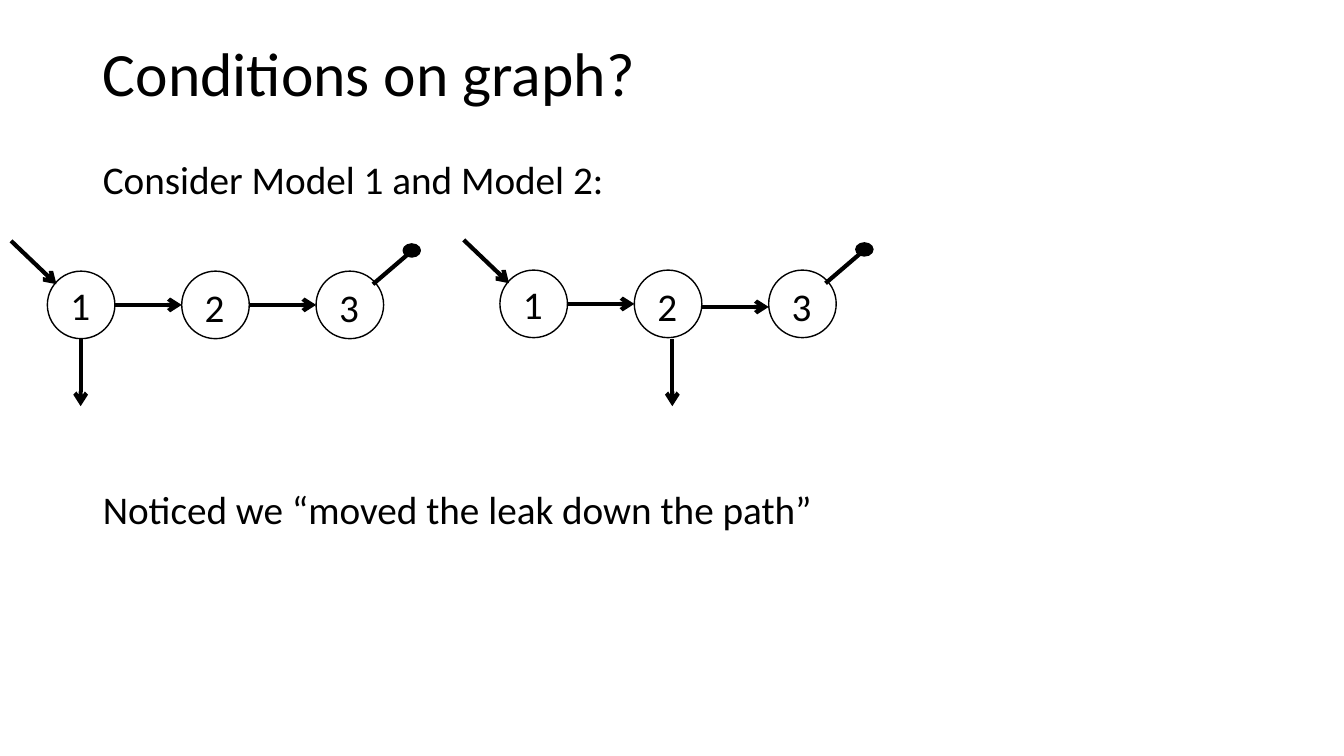
from lxml import etree
from pptx import Presentation, util as u
from pptx.dml.color import RGBColor
from pptx.enum import shapes, text
from pptx.oxml.ns import qn

TITLE = "Conditions on graph?"
LINES = [("Consider Model 1 and Model 2:", 0),
         ("Noticed we “moved the leak down the path”", 202)]
MODELS = [
    {"left": 0.47, "top": 2.69, "leak": (0.33, 0.67), "sag": (0, 0)},
    {"left": 4.96, "top": 2.68, "leak": (1.71, 0.68), "sag": (0, 0.03)},
]
NODES = [("1", 0.05), ("2", 0.075), ("3", 0.07)]
BLACK = RGBColor(0, 0, 0)
FONT = "Calibri"
SIZE, STEP = 0.67, 1.333

prs = Presentation()
prs.slide_width, prs.slide_height = u.Inches(13.333), u.Inches(7.5)
slide = prs.slides.add_slide(prs.slide_layouts[1])


def place(shape, *box):
    shape.left, shape.top, shape.width, shape.height = map(u.Inches, box)


def write(para, words, size, align):
    para.alignment = align
    run = para.add_run()
    run.text = words
    run.font.size, run.font.name = u.Pt(size), FONT
    run.font.color.rgb = BLACK


def oval(x, y, w, h, solid=False):
    shape = slide.shapes.add_shape(shapes.MSO_SHAPE.OVAL, *map(u.Inches, (x, y, w, h)))
    shape.shadow.inherit = False
    if solid:
        shape.fill.solid()
        shape.fill.fore_color.rgb = BLACK
    else:
        shape.fill.background()
    shape.line.color.rgb = BLACK
    shape.line.width = u.Pt(1)


def edge(x1, y1, x2, y2, arrow=True):
    line = slide.shapes.add_connector(
        shapes.MSO_CONNECTOR.STRAIGHT, *map(u.Inches, (x1, y1, x2, y2)))
    line.line.color.rgb = BLACK
    line.line.width = u.Pt(3)
    if arrow:
        etree.SubElement(line.line._get_or_add_ln(), qn("a:tailEnd"), type="arrow")
    etree.SubElement(line._element.spPr, qn("a:effectLst"))


def label(words, x, y):
    box = slide.shapes.add_textbox(*map(u.Inches, (x, y, 0.4, 0.57)))
    box.text_frame.word_wrap = False
    write(box.text_frame.paragraphs[0], words, 28, text.PP_ALIGN.LEFT)


def model(left, top, leak, sag):
    mid = top + SIZE / 2
    for i, (name, drop) in enumerate(NODES):
        x = left + i * STEP
        oval(x, top, SIZE, SIZE)
        label(name, x + 0.13, top + drop)
    for i, dip in enumerate(sag):
        x = left + i * STEP
        edge(x + SIZE, mid + dip, x + STEP, mid + dip)
    edge(left - 0.36, top - 0.3, left + 0.09, top + 0.13)
    x, y = left + leak[0], top + leak[1]
    edge(x, y, x, y + SIZE)
    edge(left + 3.23, top + 0.13, left + 3.58, top - 0.17, False)
    oval(left + 3.53, top - 0.27, 0.17, 0.13, True)


head = slide.shapes.title
place(head, 0.92, 0.03, 11.5, 1.45)
head.text_frame.vertical_anchor = text.MSO_ANCHOR.MIDDLE
head.text_frame.paragraphs[0].line_spacing = 0.9
write(head.text_frame.paragraphs[0], TITLE, 44, text.PP_ALIGN.LEFT)

body = slide.placeholders[1]
place(body, 0.92, 1.49, 11.5, 5.12)
frame = body.text_frame
frame.auto_size = text.MSO_AUTO_SIZE.NONE
for i, (words, gap) in enumerate(LINES):
    para = frame.add_paragraph() if i else frame.paragraphs[0]
    para.space_before = u.Pt(gap)
    write(para, words, 28, text.PP_ALIGN.LEFT)
    props = para._p.get_or_add_pPr()
    props.set("marL", "0")
    props.set("indent", "0")
    etree.SubElement(props, qn("a:buNone"))

for item in MODELS:
    model(**item)

prs.save("out.pptx")
